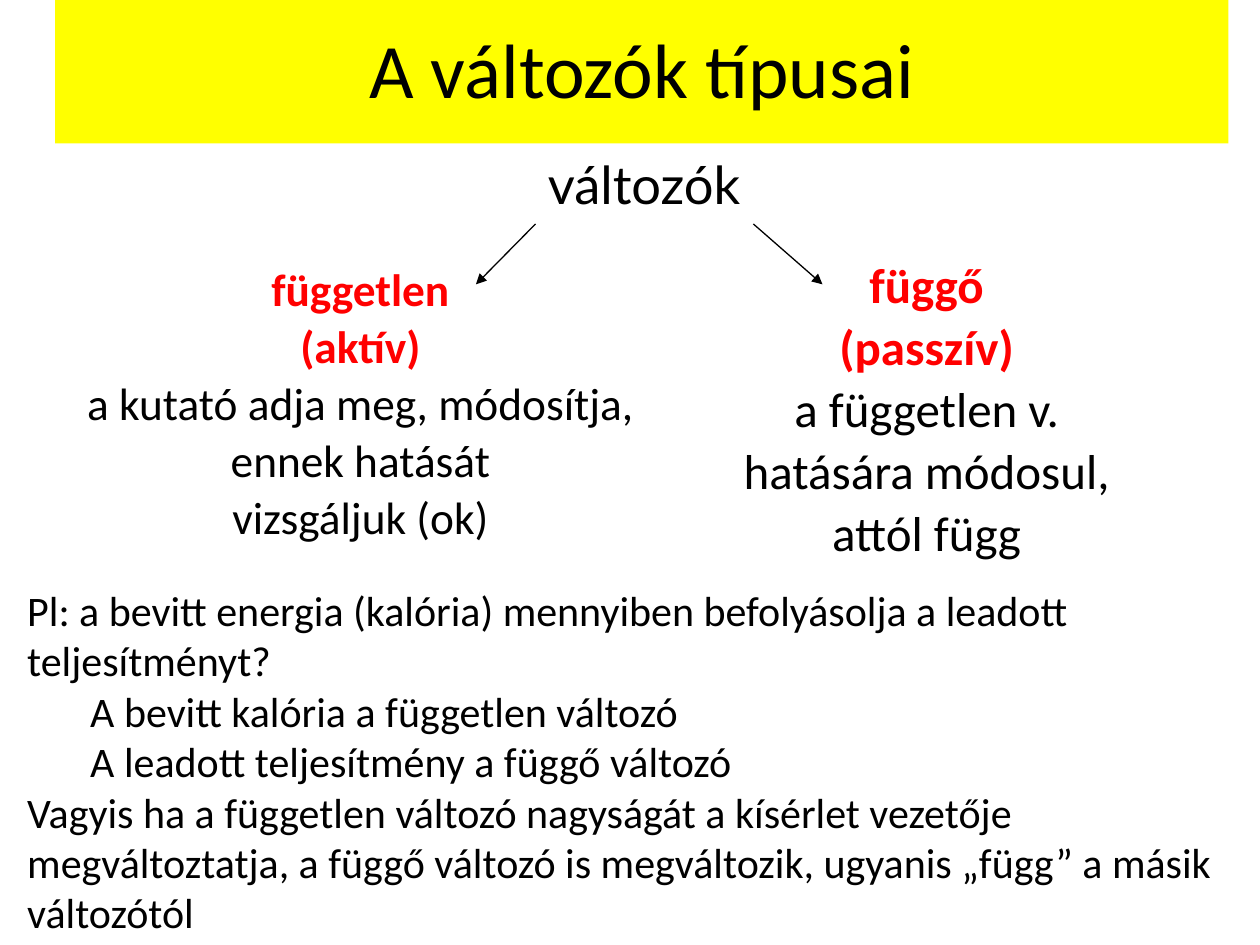
from pptx import Presentation
from pptx.util import Pt
from pptx.dml.color import RGBColor
from pptx.enum.shapes import MSO_CONNECTOR
from pptx.enum.text import MSO_ANCHOR, PP_ALIGN
from pptx.oxml.ns import qn
from lxml import etree

LEFT, CENTER = PP_ALIGN.LEFT, PP_ALIGN.CENTER
MIDDLE = MSO_ANCHOR.MIDDLE
LINE = MSO_CONNECTOR.STRAIGHT
BLACK, RED, YELLOW = "000000", "FF0000", "FFFF00"

# Content: boxes are left, top, width, height
TITLE = "A változók típusai"
TITLE_BOX = (31.5, -4.5, 670.5, 86.5)
ROOT = "változók"
ROOT_BOX = (306, 83.5, 124.5, 43.5)
COLUMNS = [
    ((41, 149, 330, 176.5), 25.9, 4.7,
     ["független", "(aktív)"],
     ["a kutató adja meg, módosítja,", "ennek hatását", "vizsgáljuk (ok)"]),
    ((364.5, 145.5, 330, 204.5), 28, 5.2,
     ["függő", "(passzív)"],
     ["a független v.", "hatására módosul,", "attól függ"]),
]
ARROWS = [(306, 128, 272, 162.5), (430.5, 128, 470, 162.5)]
EXAMPLE = [
    "Pl: a bevitt energia (kalória) mennyiben befolyásolja a leadott teljesítményt?",
    "\tA bevitt kalória a független változó",
    "\tA leadott teljesítmény a függő változó",
    "Vagyis ha a független változó nagyságát a kísérlet vezetője megváltoztatja, "
    "a függő változó is megváltozik, ugyanis „függ” a másik változótól",
]
EXAMPLE_BOX = (8.5, 330.5, 711.5, 211)


def color(hexa):
    return RGBColor.from_string(hexa)


def place(shape, box):
    shape.left, shape.top, shape.width, shape.height = map(Pt, box)


def write(frame, lines, size, font="Calibri", align=LEFT, gap=0, pitch=1.0):
    """Fill a frame with (text, colour, bold) lines, one paragraph each."""
    for i, (text, tint, bold) in enumerate(lines):
        para = frame.add_paragraph() if i else frame.paragraphs[0]
        para.alignment = align
        para.space_before = Pt(gap)
        para.line_spacing = pitch
        run = para.add_run()
        run.text = text
        run.font.name, run.font.size, run.font.bold = font, Pt(size), bold
        run.font.color.rgb = color(tint)


def add_text(slide, box, wrap=True):
    frame = slide.shapes.add_textbox(*map(Pt, box)).text_frame
    frame.word_wrap = wrap
    return frame


def add_arrow(slide, ends):
    line = slide.shapes.add_connector(LINE, *map(Pt, ends))
    line.line.color.rgb = color(BLACK)
    line.line.width = Pt(0.75)
    etree.SubElement(line.line._get_or_add_ln(), qn("a:tailEnd"), type="triangle")
    etree.SubElement(line._element.spPr, qn("a:effectLst"))


def main():
    deck = Presentation()
    deck.slide_width, deck.slide_height = Pt(720), Pt(540)
    slide = deck.slides.add_slide(deck.slide_layouts[5])

    # Title band
    title = slide.shapes.title
    place(title, TITLE_BOX)
    title.fill.solid()
    title.fill.fore_color.rgb = color(YELLOW)
    title.text_frame.vertical_anchor = MIDDLE
    write(title.text_frame, [(TITLE, BLACK, False)], 44, align=CENTER)

    # Two kinds of variable
    for box, size, gap, heads, notes in COLUMNS:
        lines = [(t, RED, True) for t in heads] + [(t, BLACK, False) for t in notes]
        write(add_text(slide, box), lines, size, align=CENTER, gap=gap, pitch=0.9)

    # Root word with its arrows
    write(add_text(slide, ROOT_BOX, wrap=False), [(ROOT, BLACK, False)], 30,
          font="Lato", gap=6)
    for ends in ARROWS:
        add_arrow(slide, ends)

    # Worked example
    write(add_text(slide, EXAMPLE_BOX), [(t, BLACK, False) for t in EXAMPLE], 24)
    deck.save("out.pptx")


if __name__ == "__main__":
    main()
